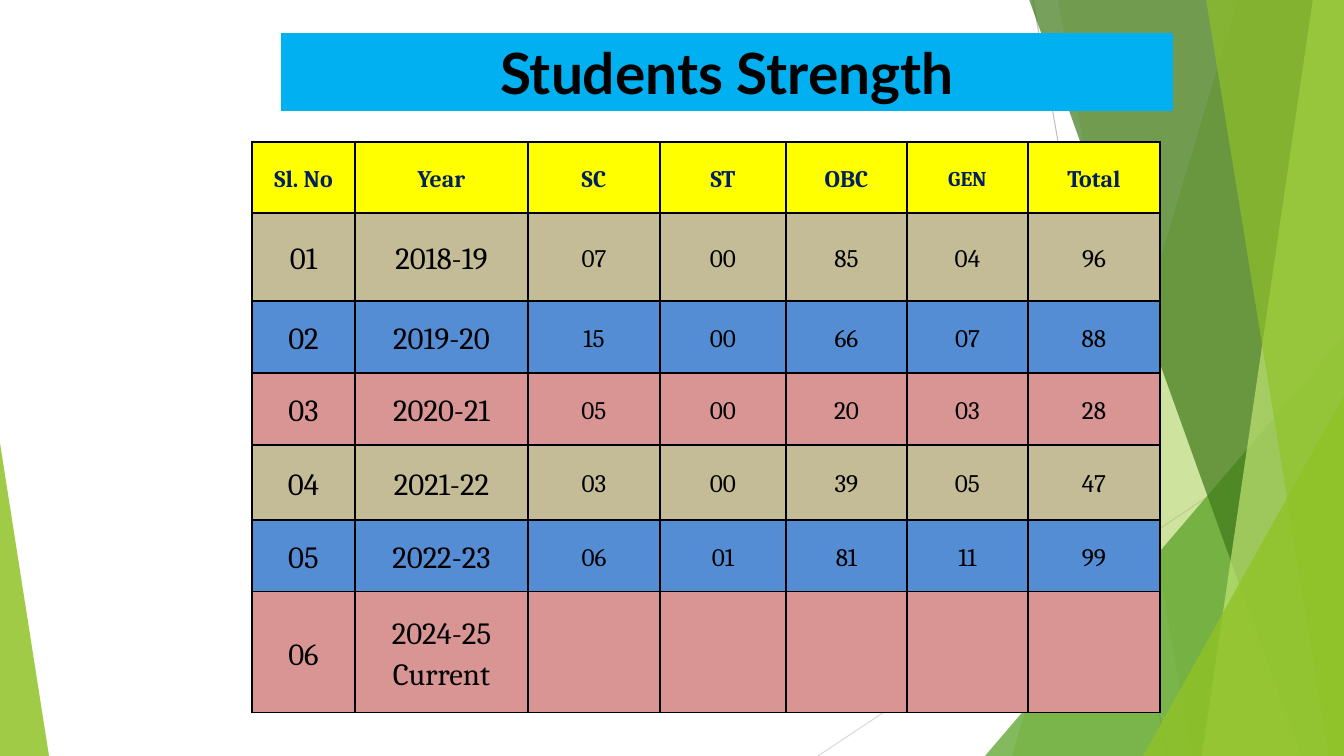
from dataclasses import dataclass

from lxml import etree
from pptx import Presentation
from pptx.dml.color import RGBColor
from pptx.enum.shapes import MSO_CONNECTOR, MSO_SHAPE
from pptx.enum.text import MSO_ANCHOR, MSO_AUTO_SIZE, PP_ALIGN
from pptx.oxml.ns import qn
from pptx.util import Emu, Pt

STRAIGHT = MSO_CONNECTOR.STRAIGHT
TRIANGLE = MSO_SHAPE.ISOSCELES_TRIANGLE
CENTER = PP_ALIGN.CENTER
MIDDLE = MSO_ANCHOR.MIDDLE
NO_AUTOFIT = MSO_AUTO_SIZE.NONE

EMU_PER_PX = 914400 / 100.8
SLIDE_W, SLIDE_H = 1344, 756
TITLE_ONLY_LAYOUT = 5

COLORS = {
    "lime": "90C226", "green": "54A021", "forest": "3F7819", "pale": "C0E474",
    "gray": "BFBFBF", "light_gray": "D9D9D9", "sky": "00B0F0",
    "black": "000000", "navy": "002060", "yellow": "FFFF00",
    "sand": "C4BC96", "blue": "548DD4", "rose": "D99594",
}


@dataclass(frozen=True)
class Ray:
    start: tuple[int, int]
    end: tuple[int, int]
    color: str


@dataclass(frozen=True)
class Shard:
    """Band from a slanted left edge to the right edge of the slide."""
    top_x: int
    bottom_x: int
    color: str
    opacity: int


@dataclass(frozen=True)
class Wedge:
    """Triangle standing on the bottom edge of the slide."""
    left: int
    top: int
    width: int
    apex: int
    color: str
    opacity: int


RAYS = [
    Ray((1033, 0), (1167, 756), "gray"),
    Ray((1344, 406), (818, 756), "light_gray"),
]
FACETS = [
    Shard(1238, 1012, "lime", 30),
    Shard(1058, 1192, "lime", 20),
    Wedge(985, 336, 359, 1, "green", 72),
    Shard(1029, 1301, "forest", 70),
    Shard(1313, 1202, "pale", 70),
    Shard(1206, 1329, "lime", 65),
    Wedge(1143, 396, 201, 1, "lime", 80),
    Wedge(0, 443, 49, 0, "lime", 85),
]

STRENGTH = [
    ["Sl. No", "Year", "SC", "ST", "OBC", "GEN", "Total"],
    ["01", "2018-19", "07", "00", "85", "04", "96"],
    ["02", "2019-20", "15", "00", "66", "07", "88"],
    ["03", "2020-21", "05", "00", "20", "03", "28"],
    ["04", "2021-22", "03", "00", "39", "05", "47"],
    ["05", "2022-23", "06", "01", "81", "11", "99"],
    ["06", "2024-25 Current", "", "", "", "", ""],
]
COLUMN_WIDTHS = [103, 173, 132, 126, 121, 121, 132]
ROW_HEIGHTS = [71, 88, 72, 72, 75, 72, 121]
ROW_COLORS = ["sand", "blue", "rose"]


def px(length: int) -> Emu:
    return Emu(round(length * EMU_PER_PX))


def rgb(name: str) -> RGBColor:
    return RGBColor.from_string(COLORS[name])


def draw_ray(shapes, ray: Ray) -> None:
    line = shapes.add_connector(STRAIGHT, *map(px, ray.start + ray.end))
    line.line.color.rgb = rgb(ray.color)
    line.line.width = Pt(0.75)
    etree.SubElement(line.element.spPr, qn("a:effectLst"))


def draw_facet(shapes, facet: Shard | Wedge) -> None:
    if isinstance(facet, Shard):
        outline = shapes.build_freeform(facet.top_x, -1, scale=EMU_PER_PX)
        outline.add_line_segments(
            [(SLIDE_W, -1), (SLIDE_W, SLIDE_H), (facet.bottom_x, SLIDE_H)])
        shape = outline.convert_to_shape()
    else:
        shape = shapes.add_shape(
            TRIANGLE, px(facet.left), px(facet.top),
            px(facet.width), px(SLIDE_H - facet.top))
        shape.adjustments[0] = facet.apex
    shape.shadow.inherit = False
    shape.line.fill.background()
    shape.fill.solid()
    shape.fill.fore_color.rgb = rgb(facet.color)
    tint = shape.element.spPr.find(f"{qn('a:solidFill')}/{qn('a:srgbClr')}")
    etree.SubElement(tint, qn("a:alpha"), val=str(facet.opacity * 1000))


def style_text(paragraph, font_name: str, size: float, color: str, bold: bool) -> None:
    paragraph.alignment = CENTER
    for run in paragraph.runs:
        run.font.name = font_name
        run.font.size = Pt(size)
        run.font.bold = bold
        run.font.color.rgb = rgb(color)


def place_heading(slide) -> None:
    heading = slide.shapes.title
    slide.shapes.element.append(heading.element)  # in front of the facets
    heading.left, heading.top = px(281), px(33)
    heading.width, heading.height = px(892), px(78)
    heading.fill.solid()
    heading.fill.fore_color.rgb = rgb("sky")
    frame = heading.text_frame
    frame.text = "Students Strength"
    frame.auto_size = NO_AUTOFIT
    frame.vertical_anchor = MIDDLE
    style_text(frame.paragraphs[0], "Lato", 40.6, "black", True)


def add_borders(tc) -> None:
    properties = tc.get_or_add_tcPr()
    for side in ("a:lnL", "a:lnR", "a:lnT", "a:lnB"):
        border = etree.SubElement(properties, qn(side), w=str(Pt(1)))
        fill = etree.SubElement(border, qn("a:solidFill"))
        etree.SubElement(fill, qn("a:srgbClr"), val=COLORS["black"])


def text_size(row: int, column: int) -> int:
    if row == 0:
        return 15 if STRENGTH[0][column] == "GEN" else 17
    return 22 if column < 2 else 18


def draw_strength_table(shapes) -> None:
    frame = shapes.add_table(
        len(ROW_HEIGHTS), len(COLUMN_WIDTHS), px(252), px(142),
        px(sum(COLUMN_WIDTHS)), px(sum(ROW_HEIGHTS)))
    table = frame.table
    table.horz_banding = False
    for column, width in zip(table.columns, COLUMN_WIDTHS):
        column.width = px(width)
    for row, height in zip(table.rows, ROW_HEIGHTS):
        row.height = px(height)
    for tc in frame.element.iter(qn("a:tc")):
        add_borders(tc)

    for r, values in enumerate(STRENGTH):
        is_header = r == 0
        row_color = "yellow" if is_header else ROW_COLORS[(r - 1) % len(ROW_COLORS)]
        for c, value in enumerate(values):
            cell = table.cell(r, c)
            cell.fill.solid()
            cell.fill.fore_color.rgb = rgb(row_color)
            cell.vertical_anchor = MIDDLE
            cell.margin_left = cell.margin_right = px(6)
            cell.margin_top = cell.margin_bottom = 0
            cell.text_frame.text = value
            paragraph = cell.text_frame.paragraphs[0]
            paragraph.line_spacing = 1.15
            style_text(paragraph, "Cambria", text_size(r, c),
                       "navy" if is_header else "black", is_header)


def main() -> None:
    deck = Presentation()
    deck.slide_width, deck.slide_height = px(SLIDE_W), px(SLIDE_H)
    slide = deck.slides.add_slide(deck.slide_layouts[TITLE_ONLY_LAYOUT])

    # Background decoration
    for ray in RAYS:
        draw_ray(slide.shapes, ray)
    for facet in FACETS:
        draw_facet(slide.shapes, facet)

    # Content
    place_heading(slide)
    draw_strength_table(slide.shapes)
    deck.save("out.pptx")


if __name__ == "__main__":
    main()
